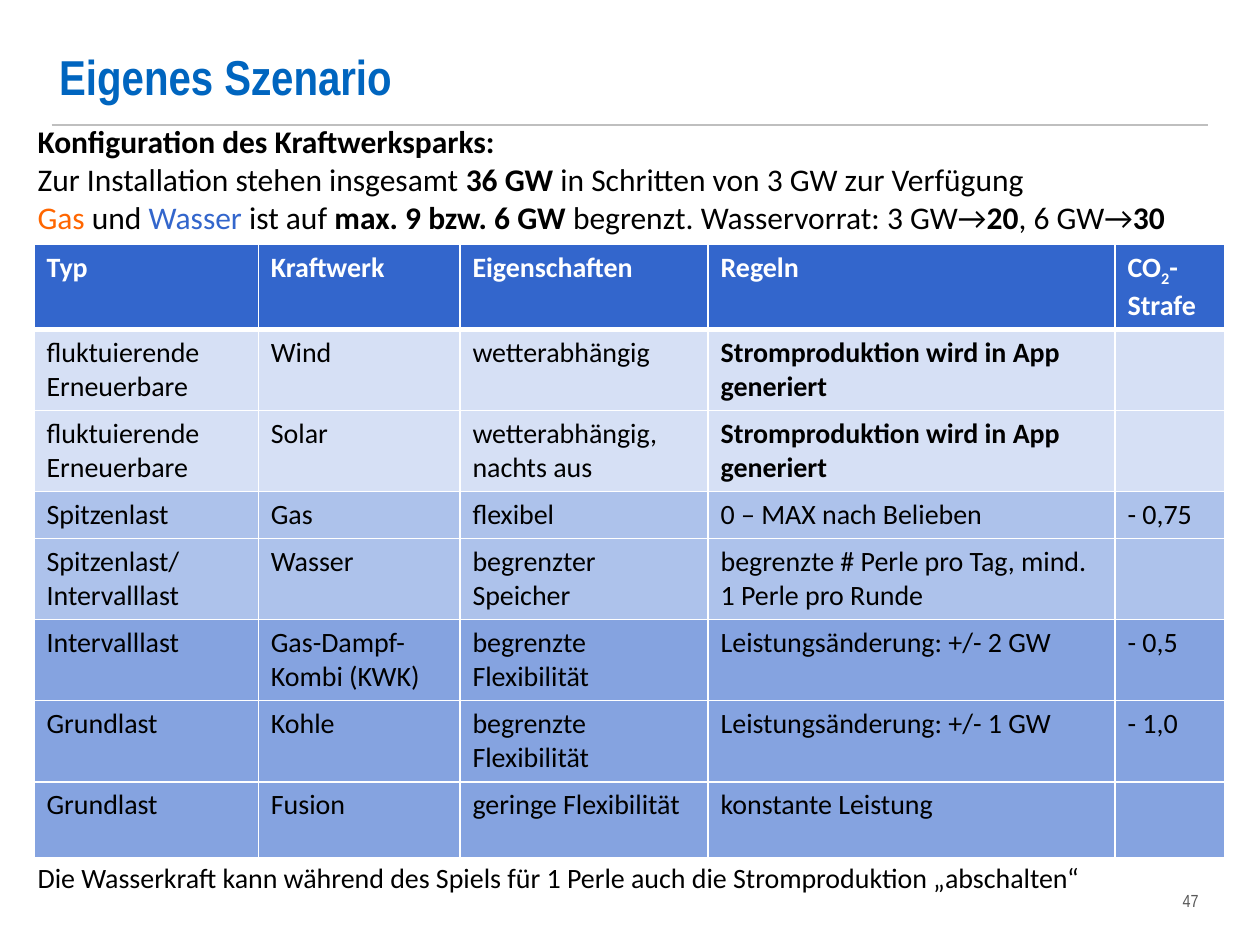
from dataclasses import dataclass

from lxml import etree
from pptx import Presentation
from pptx.dml.color import RGBColor
from pptx.enum.shapes import MSO_CONNECTOR, MSO_SHAPE
from pptx.enum.text import MSO_ANCHOR, MSO_AUTO_SIZE, PP_ALIGN
from pptx.oxml.ns import qn
from pptx.util import Inches, Pt

LINE = MSO_CONNECTOR.STRAIGHT
RECT = MSO_SHAPE.RECTANGLE
TOP, MID, LOW = MSO_ANCHOR.TOP, MSO_ANCHOR.MIDDLE, MSO_ANCHOR.BOTTOM
LEFT, RIGHT = PP_ALIGN.LEFT, PP_ALIGN.RIGHT
FIXED = MSO_AUTO_SIZE.NONE


@dataclass(frozen=True)
class Theme:
    head: str = "Arial Narrow"
    body: str = "Calibri"
    title: str = "0065BF"
    text: str = "000000"
    white: str = "FFFFFF"
    rule: str = "BFBFBF"
    page: str = "595959"
    gas: str = "FF6600"
    water: str = "3366CC"
    light: str = "D6E0F5"
    mid: str = "ADC2EB"
    dark: str = "85A3E0"
    title_pt: int = 28
    intro_pt: int = 18
    body_pt: int = 16
    page_pt: int = 10


T = Theme()
BOLD = {"bold": True}
BODY = {"name": T.body, "size": T.body_pt, "color": T.text, "bold": False}
INTRO = {**BODY, "size": T.intro_pt}
HEAD = {**BODY, "color": T.white, "bold": True}
TITLE = {"name": T.head, "size": T.title_pt, "color": T.title, "bold": True}
PAGE = {"name": T.head, "size": T.page_pt, "color": T.page}

INTRO_TEXT = [
    [("Konfiguration des Kraftwerksparks:", BOLD)],
    ["Zur Installation stehen insgesamt ", ("36 GW ", BOLD),
     "in Schritten von 3 GW zur Verfügung\n",
     ("Gas", {"color": T.gas}), " und ", ("Wasser", {"color": T.water}),
     " ist auf ", ("max. 9 bzw. 6 GW ", BOLD),
     "begrenzt. Wasservorrat: 3 GW→", ("20", BOLD), ", 6 GW→", ("30", BOLD)],
]
APP = [[("Stromproduktion wird in App generiert", BOLD)]]
PENALTY = [["CO", ("2", {"base": -25000}), "- Strafe"]]
COLS = [1.78, 1.6, 1.97, 3.23, 0.87]
# fill, row height, cells
ROWS = [
    (T.water, 0.66, ["Typ", "Kraftwerk", "Eigenschaften", "Regeln", PENALTY]),
    (T.light, 0.64, ["fluktuierende Erneuerbare", "Wind",
                     "wetterabhängig", APP, ""]),
    (T.light, 0.64, ["fluktuierende Erneuerbare", "Solar",
                     "wetterabhängig,\nnachts aus", APP, ""]),
    (T.mid, 0.37, ["Spitzenlast", "Gas", "flexibel",
                   "0 – MAX nach Belieben", "- 0,75"]),
    (T.mid, 0.64, [[["Spitzenlast/"], ["Intervalllast"]], "Wasser",
                   "begrenzter Speicher",
                   "begrenzte # Perle pro Tag, mind. 1 Perle pro Runde", ""]),
    (T.dark, 0.64, ["Intervalllast", "Gas-Dampf-Kombi (KWK)",
                    "begrenzte Flexibilität",
                    "Leistungsänderung: +/- 2 GW", "- 0,5"]),
    (T.dark, 0.64, ["Grundlast", "Kohle", "begrenzte Flexibilität",
                    "Leistungsänderung: +/- 1 GW", "- 1,0"]),
    (T.dark, 0.6, ["Grundlast", "Fusion", "geringe Flexibilität",
                   "konstante Leistung", ""]),
]


def rgb(code):
    return RGBColor.from_string(code)


def style(run, form):
    for key, val in form.items():
        if key == "color":
            run.font.color.rgb = rgb(val)
        elif key == "base":
            run._r.get_or_add_rPr().set("baseline", str(val))
        else:
            setattr(run.font, key, Pt(val) if key == "size" else val)


def write(frame, text, form, align=LEFT):
    """Fill a frame from a string, or from paragraphs made of runs."""
    paras = [[text]] if isinstance(text, str) else text
    for i, parts in enumerate(paras):
        para = frame.add_paragraph() if i else frame.paragraphs[0]
        para.alignment = align
        for part in parts:
            words, extra = (part, {}) if isinstance(part, str) else part
            for j, line in enumerate(words.split("\n")):
                if j:
                    para.add_line_break()
                if line:
                    run = para.add_run()
                    run.text = line
                    style(run, {**form, **extra})


def edge(cell, low):
    """Draw white cell borders, the bottom one `low` points wide."""
    props = cell._tc.get_or_add_tcPr()
    for side, width in zip("LRTB", (1, 1, 1, low)):
        line = etree.SubElement(props, qn(f"a:ln{side}"), w=str(Pt(width)))
        fill = etree.SubElement(line, qn("a:solidFill"))
        etree.SubElement(fill, qn("a:srgbClr"), val=T.white)


def add_title(slide, box):
    title = slide.shapes.title
    for key, val in zip(("left", "top", "width", "height"), box):
        setattr(title, key, Inches(val))
    frame = title.text_frame
    frame.auto_size, frame.vertical_anchor = FIXED, LOW
    write(frame, "Eigenes Szenario", TITLE)
    frame.paragraphs[0].line_spacing = 0.9


def add_rule(slide, left, right, top):
    rule = slide.shapes.add_connector(
        LINE, Inches(left), Inches(top), Inches(right), Inches(top))
    rule.line.color.rgb, rule.line.width = rgb(T.rule), Pt(1)
    etree.SubElement(rule._element.spPr, qn("a:effectLst"))


def add_plan(slide, box):
    rows, cols = len(ROWS), len(COLS)
    table = slide.shapes.add_table(rows, cols, *map(Inches, box)).table
    table.horz_banding = False
    for col, width in zip(table.columns, COLS):
        col.width = Inches(width)
    for i, (fill, height, texts) in enumerate(ROWS):
        table.rows[i].height = Inches(height)
        for j, text in enumerate(texts):
            cell = table.cell(i, j)
            edge(cell, 1 if i else 3)
            cell.fill.solid()
            cell.fill.fore_color.rgb = rgb(fill)
            write(cell.text_frame, text, BODY if i else HEAD)


def add_intro(slide, box):
    shape = slide.shapes.add_shape(RECT, *map(Inches, box))
    shape.shadow.inherit = False
    shape.fill.background()
    shape.line.color.rgb, shape.line.width = rgb(T.white), Pt(0.75)
    shape.text_frame.vertical_anchor = TOP
    shape.text_frame.word_wrap = True
    write(shape.text_frame, INTRO_TEXT, INTRO)


def add_note(slide, box, text, form, align=LEFT, anchor=TOP):
    frame = slide.shapes.add_textbox(*map(Inches, box)).text_frame
    frame.word_wrap, frame.vertical_anchor = True, anchor
    write(frame, text, form, align)


def main():
    deck = Presentation()
    deck.slide_width, deck.slide_height = Inches(10), Inches(7.5)
    slide = deck.slides.add_slide(deck.slide_layouts[5])
    add_title(slide, (0.37, 0.36, 2.97, 0.53))
    add_rule(slide, 0.41, 9.59, 0.99)
    add_plan(slide, (0.27, 1.94, sum(COLS), sum(row[1] for row in ROWS)))
    add_note(slide, (0.2, 6.78, 8.58, 0.37),
             "Die Wasserkraft kann während des Spiels für 1 Perle auch "
             "die Stromproduktion „abschalten“", BODY)
    add_intro(slide, (0.2, 0.92, 9.54, 1.01))
    add_note(slide, (8.72, 6.95, 0.89, 0.4), "47", PAGE, RIGHT, MID)
    deck.save("out.pptx")


if __name__ == "__main__":
    main()
